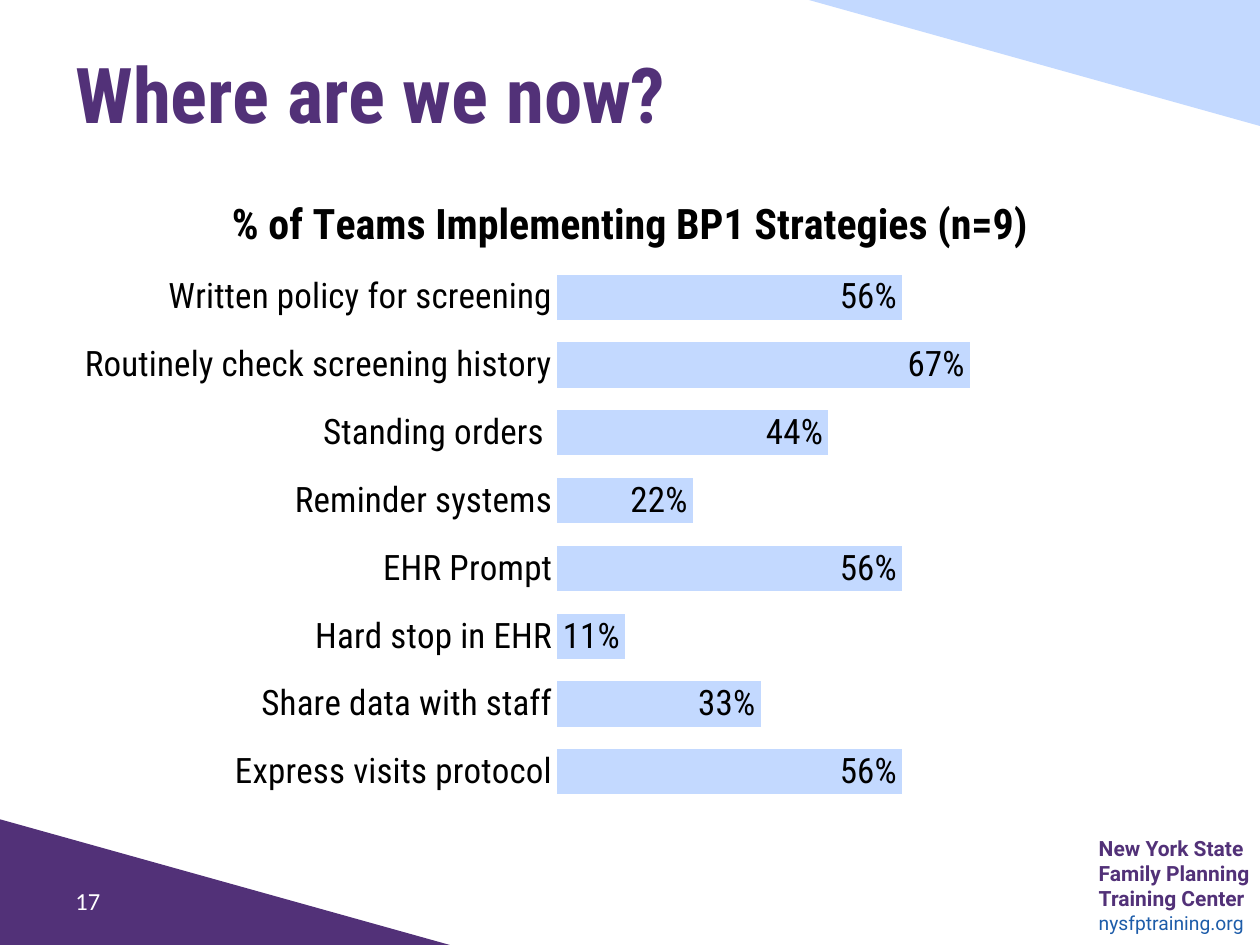
from lxml import etree
from pptx import Presentation
from pptx import util as u
from pptx.chart import data as chart_data
from pptx.dml.color import RGBColor
from pptx.enum import chart as charts, shapes, text
from pptx.oxml.ns import qn

COLOURS = {
    "purple": "523178",
    "pale_blue": "C3D9FF",
    "link_blue": "1D5CA9",
    "white": "FFFFFF",
    "black": "000000",
}
HEADING_FONT = "Roboto Condensed"
STRATEGIES = {
    "Written policy for screening": 0.56,
    "Routinely check screening history": 0.67,
    "Standing orders ": 0.44,
    "Reminder systems": 0.22,
    "EHR Prompt": 0.56,
    "Hard stop in EHR": 0.11,
    "Share data with staff": 0.33,
    "Express visits protocol": 0.56,
}


def colour(name):
    return RGBColor.from_string(COLOURS[name])


def set_font(font, size, name, colour_name, bold=False):
    font.size = u.Pt(size)
    font.name = name
    font.bold = bold
    font.color.rgb = colour(colour_name)


def add_corner(slide, left, top, colour_name, rotation=0):
    shape = slide.shapes.add_shape(
        shapes.MSO_SHAPE.RIGHT_TRIANGLE,
        u.Inches(left), u.Inches(top), u.Inches(3.58), u.Inches(1),
    )
    shape.rotation = rotation
    shape.shadow.inherit = False
    shape.fill.solid()
    shape.fill.fore_color.rgb = colour(colour_name)
    shape.line.fill.background()


def add_text(slide, box, lines, anchor=text.MSO_ANCHOR.MIDDLE, margins=True):
    shape = slide.shapes.add_textbox(*[u.Inches(length) for length in box])
    frame = shape.text_frame
    frame.word_wrap = True
    frame.vertical_anchor = anchor
    if not margins:
        frame.margin_left = frame.margin_right = 0
        frame.margin_top = frame.margin_bottom = 0
    frame.text = "\n".join(line for line, *_ in lines)
    for paragraph, (_, *style) in zip(frame.paragraphs, lines):
        set_font(paragraph.runs[0].font, *style)


def place_plot(chart, x, y, w, h):
    plot_area = chart._chartSpace.chart.plotArea
    for old in plot_area.findall(qn("c:layout")):
        plot_area.remove(old)
    layout = etree.Element(qn("c:layout"))
    manual = etree.SubElement(layout, qn("c:manualLayout"))
    settings = {"layoutTarget": "inner", "xMode": "edge", "yMode": "edge",
                "x": x, "y": y, "w": w, "h": h}
    for tag, value in settings.items():
        etree.SubElement(manual, qn(f"c:{tag}")).set("val", str(value))
    plot_area.insert(0, layout)


def add_strategy_chart(slide):
    data = chart_data.CategoryChartData(number_format="0%")
    data.categories = list(STRATEGIES)
    data.add_series("Series 1", list(STRATEGIES.values()))
    chart = slide.shapes.add_chart(
        charts.XL_CHART_TYPE.BAR_CLUSTERED,
        u.Inches(0.5), u.Inches(1.33), u.Inches(9), u.Inches(5.17), data,
    ).chart
    set_font(chart.font, 20, HEADING_FONT, "black")
    chart.has_legend = False
    chart.has_title = True
    title = chart.chart_title
    title.include_in_layout = False
    title.text_frame.text = "% of Teams Implementing BP1 Strategies (n=9)"
    set_font(title.text_frame.paragraphs[0].runs[0].font,
             24, HEADING_FONT, "black", True)

    category_axis = chart.category_axis
    category_axis.reverse_order = True
    category_axis.major_tick_mark = charts.XL_TICK_MARK.NONE
    category_axis.format.line.fill.background()
    value_axis = chart.value_axis
    value_axis.minimum_scale = 0
    value_axis.maximum_scale = 1
    value_axis.major_unit = 1
    value_axis.has_major_gridlines = False
    value_axis.visible = False

    plot = chart.plots[0]
    plot.gap_width = 50
    plot.vary_by_categories = False
    fill = plot.series[0].format.fill
    fill.solid()
    fill.fore_color.rgb = colour("pale_blue")
    plot.has_data_labels = True
    labels = plot.data_labels
    labels.show_value = True
    labels.number_format = "0%"
    labels.number_format_is_linked = False
    labels.position = charts.XL_LABEL_POSITION.INSIDE_END
    set_font(labels.font, 20, HEADING_FONT, "black")
    place_plot(chart, 0.436, 0.147, 0.543, 0.833)


def main():
    presentation = Presentation()
    presentation.slide_width = u.Inches(10)
    presentation.slide_height = u.Inches(7.5)
    slide = presentation.slides.add_slide(presentation.slide_layouts[6])

    add_corner(slide, -0.01, 6.5, "purple")
    centre_name = ["New York State", "Family Planning", "Training Center"]
    centre_lines = [(line, 12, "Roboto", "purple", True) for line in centre_name]
    add_text(slide, (8.72, 6.63, 1.51, 0.81),
             centre_lines + [("nysfptraining.org", 11, "Roboto", "link_blue")],
             text.MSO_ANCHOR.TOP, margins=False)
    add_corner(slide, 6.42, 0, "pale_blue", 180)
    add_text(slide, (0.5, 0.3, 9, 0.87),
             [("Where are we now?", 44, HEADING_FONT, "purple", True)])
    add_text(slide, (0.5, 6.95, 1.4, 0.4), [("17", 14, "Calibri", "white")])
    add_strategy_chart(slide)

    presentation.save("out.pptx")


if __name__ == "__main__":
    main()
